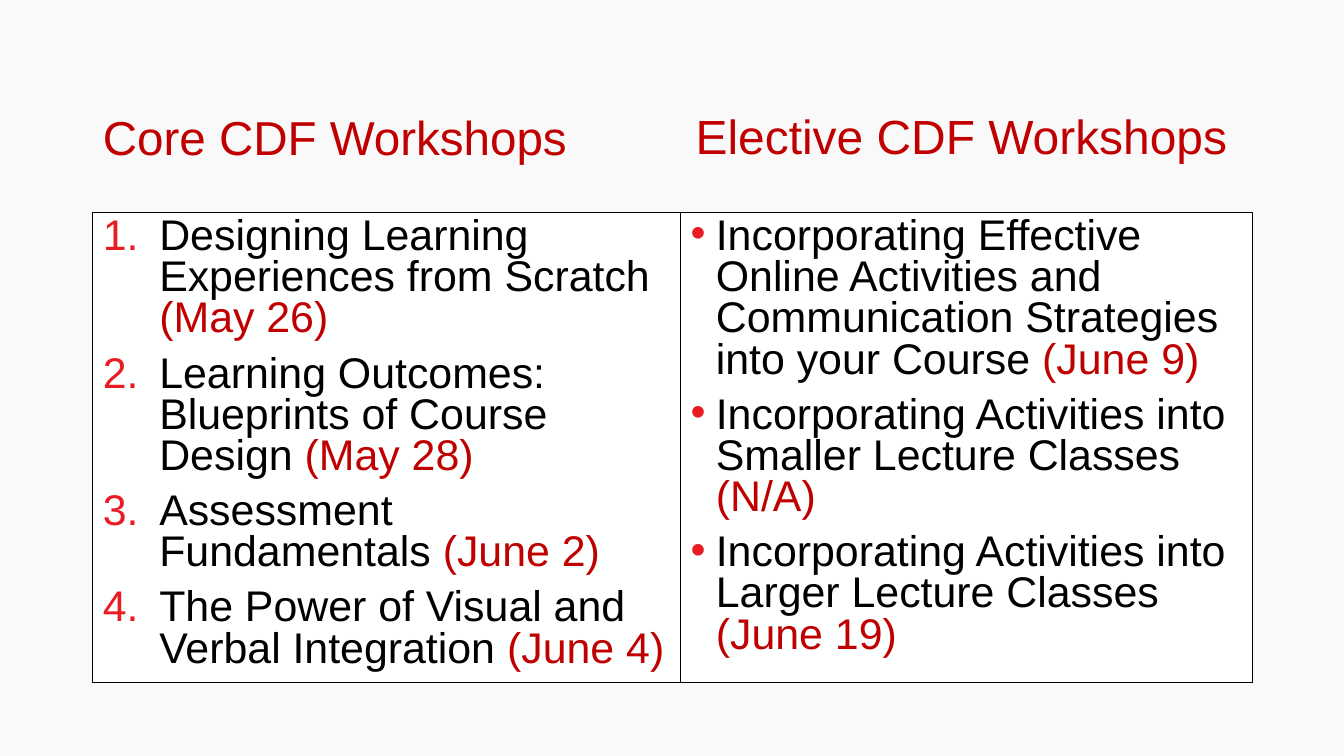
from lxml.etree import SubElement
from pptx import Presentation
from pptx.dml.color import RGBColor
from pptx.enum.text import MSO_ANCHOR, MSO_AUTO_SIZE, PP_ALIGN
from pptx.oxml.ns import qn
from pptx.util import Inches, Pt

BACKGROUND = RGBColor(0xF9, 0xF9, 0xF9)
PANEL = RGBColor(0xFE, 0xFF, 0xFF)
BLACK = RGBColor(0, 0, 0)
DARK_RED = RGBColor(0xC0, 0, 0)
BULLET_RED = RGBColor(0xE9, 0x1C, 0x24)

CORE = [
    ("Designing Learning Experiences from Scratch ", "(May 26)"),
    ("Learning Outcomes: Blueprints of Course Design ", "(May 28)"),
    ("Assessment Fundamentals ", "(June 2)"),
    ("The Power of Visual and Verbal Integration ", "(June 4)"),
]
ELECTIVE = [
    ("Incorporating Effective Online Activities and Communication Strategies "
     "into your Course ", "(June 9)"),
    ("Incorporating Activities into Smaller Lecture Classes ", "(N/A)"),
    ("Incorporating Activities into Larger Lecture Classes ", "(June 19)"),
]


def add_run(paragraph, text, size, color):
    run = paragraph.add_run()
    run.text = text
    run.font.name = "Arial"
    run.font.size = Pt(size)
    run.font.bold = False
    run.font.color.rgb = color


def place(placeholder, left, top, width, height, anchor):
    """Move a placeholder to a box in inches and return its text frame."""
    placeholder.left, placeholder.top = Inches(left), Inches(top)
    placeholder.width, placeholder.height = Inches(width), Inches(height)
    frame = placeholder.text_frame
    frame.word_wrap = True
    frame.auto_size = MSO_AUTO_SIZE.NONE
    frame.vertical_anchor = anchor
    return frame


def set_bullet(paragraph, indent, numbered):
    props = paragraph._p.get_or_add_pPr()
    props.set("marL", str(Inches(indent)))
    props.set("indent", str(-Inches(indent)))
    color = SubElement(props, qn("a:buClr"))
    SubElement(color, qn("a:srgbClr"), val=str(BULLET_RED))
    SubElement(props, qn("a:buFont"), typeface="Arial")
    if numbered:
        SubElement(props, qn("a:buAutoNum"), type="arabicPeriod")
    else:
        SubElement(props, qn("a:buChar"), char="•")


def add_heading(placeholder, text, left, width, size):
    frame = place(placeholder, left, 0.79, width, 0.9, MSO_ANCHOR.BOTTOM)
    paragraph = frame.paragraphs[0]
    paragraph.alignment = PP_ALIGN.LEFT
    paragraph.line_spacing = 0.9
    paragraph.space_before = Pt(0)
    add_run(paragraph, text, size, DARK_RED)


def add_workshops(placeholder, workshops, left, width, indent, numbered):
    frame = place(placeholder, left, 2.11, width, 4.66, MSO_ANCHOR.TOP)
    placeholder.fill.solid()
    placeholder.fill.fore_color.rgb = PANEL
    placeholder.line.color.rgb = BLACK
    placeholder.line.width = Pt(1)
    for index, (name, date) in enumerate(workshops):
        paragraph = frame.add_paragraph() if index else frame.paragraphs[0]
        set_bullet(paragraph, indent, numbered)
        paragraph.line_spacing = 0.8
        paragraph.space_before = Pt(10 if index else 0)
        add_run(paragraph, name, 30.6, BLACK)
        add_run(paragraph, date, 30.6, DARK_RED)


def build_comparison(prs):
    slide = prs.slides.add_slide(prs.slide_layouts.get_by_name("Comparison"))
    slide.background.fill.solid()
    slide.background.fill.fore_color.rgb = BACKGROUND
    title, core_head, core_list, elective_head, elective_list = slide.placeholders
    title._element.getparent().remove(title._element)
    add_heading(core_head, "Core CDF Workshops", 0.92, 5.64, 34)
    add_workshops(core_list, CORE, 0.92, 5.88, 0.56, numbered=True)
    add_heading(elective_head, "Elective CDF Workshops", 6.8, 5.67, 34.2)
    add_workshops(elective_list, ELECTIVE, 6.75, 5.67, 0.25, numbered=False)


def main():
    prs = Presentation()
    prs.slide_width, prs.slide_height = Inches(13.33), Inches(7.5)
    build_comparison(prs)
    prs.save("out.pptx")


if __name__ == "__main__":
    main()
